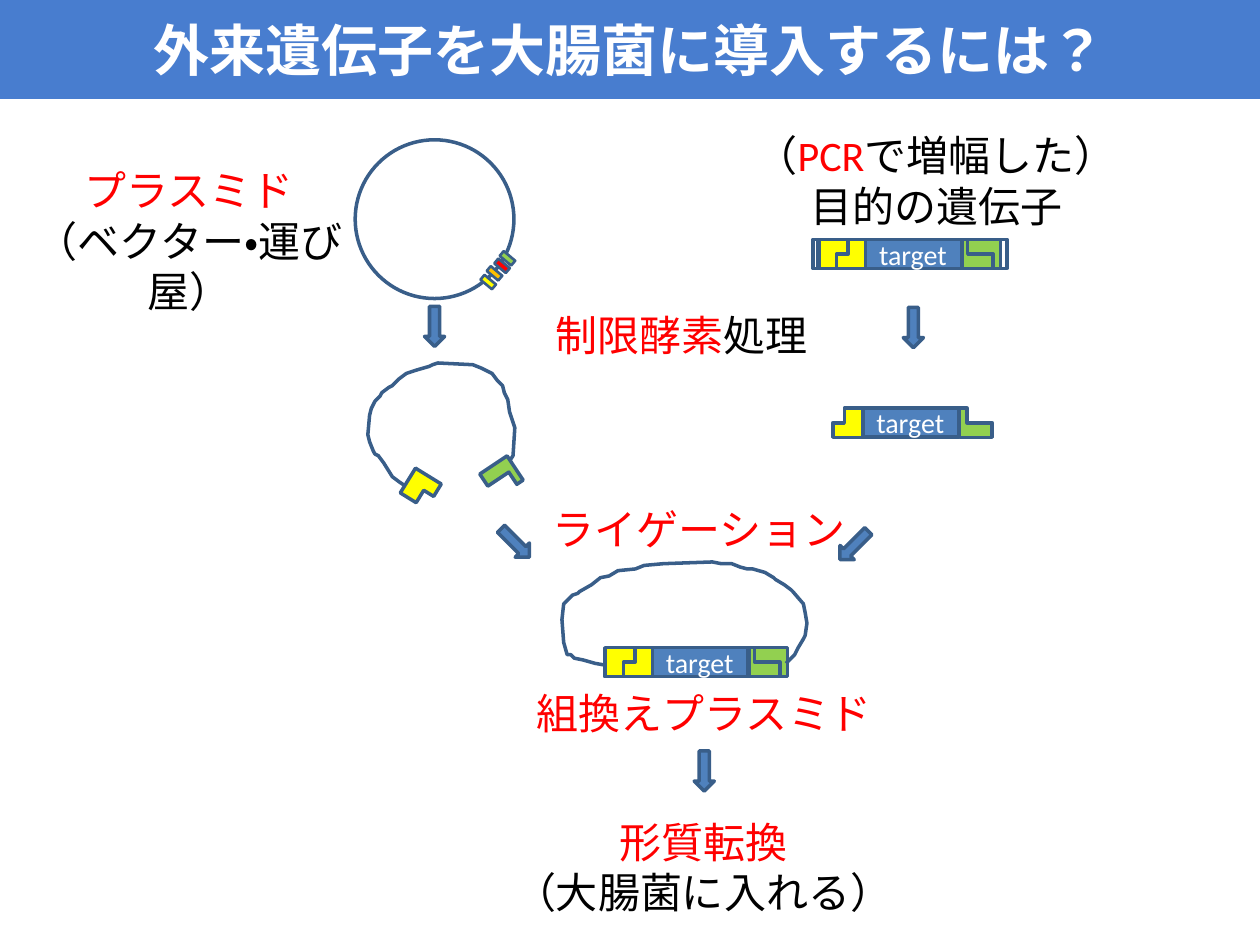
from pptx import Presentation
from pptx.dml.color import RGBColor
from pptx.enum import lang, shapes, text
from pptx.util import Pt

WHITE = RGBColor(0xFF, 0xFF, 0xFF)
BLACK = RGBColor(0x00, 0x00, 0x00)
RED = RGBColor(0xFF, 0x00, 0x00)
BANNER_BLUE = RGBColor(0x48, 0x7D, 0xCF)
BLUE = RGBColor(0x4F, 0x81, 0xBD)
OUTLINE = RGBColor(0x39, 0x5E, 0x89)
YELLOW = RGBColor(0xFF, 0xFF, 0x00)
GREEN = RGBColor(0x92, 0xD0, 0x50)
ORANGE = RGBColor(0xFF, 0xC0, 0x00)

PRESET = shapes.MSO_SHAPE
SITE_HEIGHT = 16.6
YELLOW_SITE = (17.3, YELLOW, 0.644, True)
GREEN_SITE = (18.7, GREEN, 0.26, False)

CUT_BACKBONE = [
    (20.9, 69.8), (18, 67.7), (14.4, 64.8), (9.4, 56.9), (6.5, 53.3), (4.3, 51.8),
    (2.9, 49.7), (0.7, 45.4), (0, 41), (0.7, 29.5), (2.2, 25.9), (4.3, 22.3),
    (7.2, 19.4), (7.9, 17.3), (12.2, 13.7), (13.7, 13), (18, 9.4), (22.3, 6.5),
    (28.1, 3.6), (35.3, 2.2), (37.4, 0.7), (40.3, 0), (60.5, 0.7), (64.8, 2.9),
    (70.6, 6.5), (74.2, 10.1), (77, 13), (77.8, 16.6), (79.9, 20.9), (81.4, 28.1),
    (83.5, 36.7), (82.8, 52.6), (80.6, 56.2), (77, 60.5),
]
JOINED_BACKBONE = [
    (128.2, 58.3), (133.2, 52.6), (135.4, 49), (138.2, 43.9), (139, 41.8), (139.7, 35),
    (139, 28.8), (137.5, 23.8), (132.5, 17.3), (131, 15.8), (126.7, 13), (122.4, 10.1),
    (121, 8.6), (115.9, 6.5), (109.4, 4.3), (105.8, 4.3), (101.5, 2.9), (97.2, 1.4),
    (90.7, 0.7), (85.7, 0), (57.6, 0.7), (46.8, 2.2), (41.8, 3.6), (32.4, 5),
    (26.6, 7.9), (22.3, 9.4), (16.6, 13), (10.1, 16.6), (8.6, 18), (6.5, 18.7),
    (4.3, 20.9), (1.4, 24.5), (0, 33.1), (1.4, 46.1), (2.9, 52.6), (5, 52.6),
    (7.2, 54.7), (11.5, 56.2), (19.4, 57.6), (25.2, 59),
]


def paint(shape, fill=None, line=OUTLINE, width=2):
    shape.shadow.inherit = False
    if fill is None:
        shape.fill.background()
    else:
        shape.fill.solid()
        shape.fill.fore_color.rgb = fill
    if line is None:
        shape.line.fill.background()
    else:
        shape.line.color.rgb = line
        shape.line.width = Pt(width)


def add_preset(slide, kind, box, fill=None, rotation=0, **outline):
    shape = slide.shapes.add_shape(kind, *map(Pt, box))
    paint(shape, fill, **outline)
    shape.rotation = rotation
    return shape


def add_run(paragraph, words, color, size, font="Calibri", bold=False):
    run = paragraph.add_run()
    run.text = words
    run.font.name = font
    run.font.size = Pt(size)
    run.font.bold = bold
    run.font.color.rgb = color
    run.font.language_id = lang.MSO_LANGUAGE_ID.JAPANESE
    paragraph.alignment = text.PP_ALIGN.CENTER


def add_label(slide, box, *lines):
    frame = slide.shapes.add_textbox(*map(Pt, box)).text_frame
    frame.word_wrap = True
    frame.auto_size = text.MSO_AUTO_SIZE.SHAPE_TO_FIT_TEXT
    for number, line in enumerate(lines):
        paragraph = frame.add_paragraph() if number else frame.paragraphs[0]
        for words, color in line:
            add_run(paragraph, words, color, 24)


def add_banner(slide, width, height):
    add_preset(slide, PRESET.RECTANGLE, (0, 0, width, height), BANNER_BLUE, line=None)
    frame = slide.shapes.add_textbox(0, 0, Pt(width), Pt(height)).text_frame
    frame.word_wrap = True
    frame.vertical_anchor = text.MSO_ANCHOR.MIDDLE
    add_run(frame.paragraphs[0], "外来遺伝子を大腸菌に導入するには？", WHITE, 32, "Arial", True)


def add_site(slide, left, top, site, rotation=0):
    width, fill, arm, flipped = site
    corner = add_preset(slide, PRESET.CORNER, (left, top, width, SITE_HEIGHT), fill, rotation)
    corner.adjustments[0] = 0.5
    corner.adjustments[1] = arm
    if flipped:
        corner._element.spPr.xfrm.set("flipH", "1")


def add_insert(slide, left, top, paired=False, capped=False):
    target = add_preset(slide, PRESET.RECTANGLE, (left, top, 55.4, SITE_HEIGHT), BLUE)
    target.text_frame.vertical_anchor = text.MSO_ANCHOR.MIDDLE
    add_run(target.text_frame.paragraphs[0], "target", WHITE, 16)
    add_site(slide, left + 55.8, top, GREEN_SITE)
    add_site(slide, left - 16.6, top, YELLOW_SITE)
    if paired:
        add_site(slide, left - 26.6, top, YELLOW_SITE, 180)
        add_site(slide, left + 59, top, GREEN_SITE, 180)
    if capped:
        for offset in (-29.5, 77.8):
            add_preset(slide, PRESET.RECTANGLE, (left + offset, top, 3.6, SITE_HEIGHT))


def add_backbone(slide, left, top, points):
    builder = slide.shapes.build_freeform(*points[0], scale=Pt(1))
    builder.add_line_segments(points[1:], close=False)
    paint(builder.convert_to_shape(Pt(left), Pt(top)))


def add_plasmid(slide, left, top, size):
    add_preset(slide, PRESET.OVAL, (left, top, size, size))
    bands = ((74.2, 77, YELLOW), (77.8, 72, ORANGE), (82.1, 67.7, RED), (85.2, 63.4, GREEN))
    for across, down, fill in bands:
        add_preset(slide, PRESET.RECTANGLE, (left + across, top + down, 3.6, 8.6),
                   fill, 309.8, width=1.5)


def add_cut_plasmid(slide, left, top):
    add_backbone(slide, left, top, CUT_BACKBONE)
    add_site(slide, left + 21.6, top + 63.4, YELLOW_SITE, 211.6)
    add_site(slide, left + 67, top + 56.9, GREEN_SITE, 146.4)


def add_recombinant(slide, left, top):
    add_insert(slide, left + 51.1, top + 49, paired=True)
    add_backbone(slide, left, top, JOINED_BACKBONE)


def add_step_arrow(slide, left, top, rotation=0):
    add_preset(slide, PRESET.DOWN_ARROW, (left, top, 11.5, 23), BLUE, rotation)


def add_labels(slide):
    add_label(slide, (399.6, 70.6, 270.7, 65.5),
              [("（", BLACK), ("PCR", RED), ("で増幅した）", BLACK)],
              [("目的の遺伝子", BLACK)])
    add_label(slide, (4.3, 90.7, 207.4, 65.5),
              [("プラスミド", RED)], [("（ベクター・運び屋）", BLACK)])
    add_label(slide, (254.2, 173.5, 270.7, 36), [("制限酵素", RED), ("処理", BLACK)])
    add_label(slide, (264.2, 284.4, 270.7, 36), [("ライゲーション", RED)])
    add_label(slide, (297.4, 389.5, 210.2, 36), [("組換えプラスミド", RED)])
    add_label(slide, (266.4, 463, 270.7, 65.5),
              [("形質転換", RED)], [("（大腸菌に入れる）", BLACK)])


def main():
    deck = Presentation()
    deck.slide_width, deck.slide_height = Pt(720), Pt(540)
    slide = deck.slides.add_slide(deck.slide_layouts[6])
    add_banner(slide, 720, 56.5)
    add_plasmid(slide, 203, 79.9, 90.7)
    add_insert(slide, 494, 136.8, paired=True, capped=True)
    add_cut_plasmid(slide, 210.2, 207.4)
    add_insert(slide, 492.5, 233.3)
    add_recombinant(slide, 321.1, 321.1)
    for left, top, rotation in ((242.6, 175, 0), (516.2, 175.7, 0), (288.7, 298.8, 315),
                                (482.4, 300.2, 45), (396.7, 429.1, 0)):
        add_step_arrow(slide, left, top, rotation)
    add_labels(slide)
    deck.save("out.pptx")


if __name__ == "__main__":
    main()
